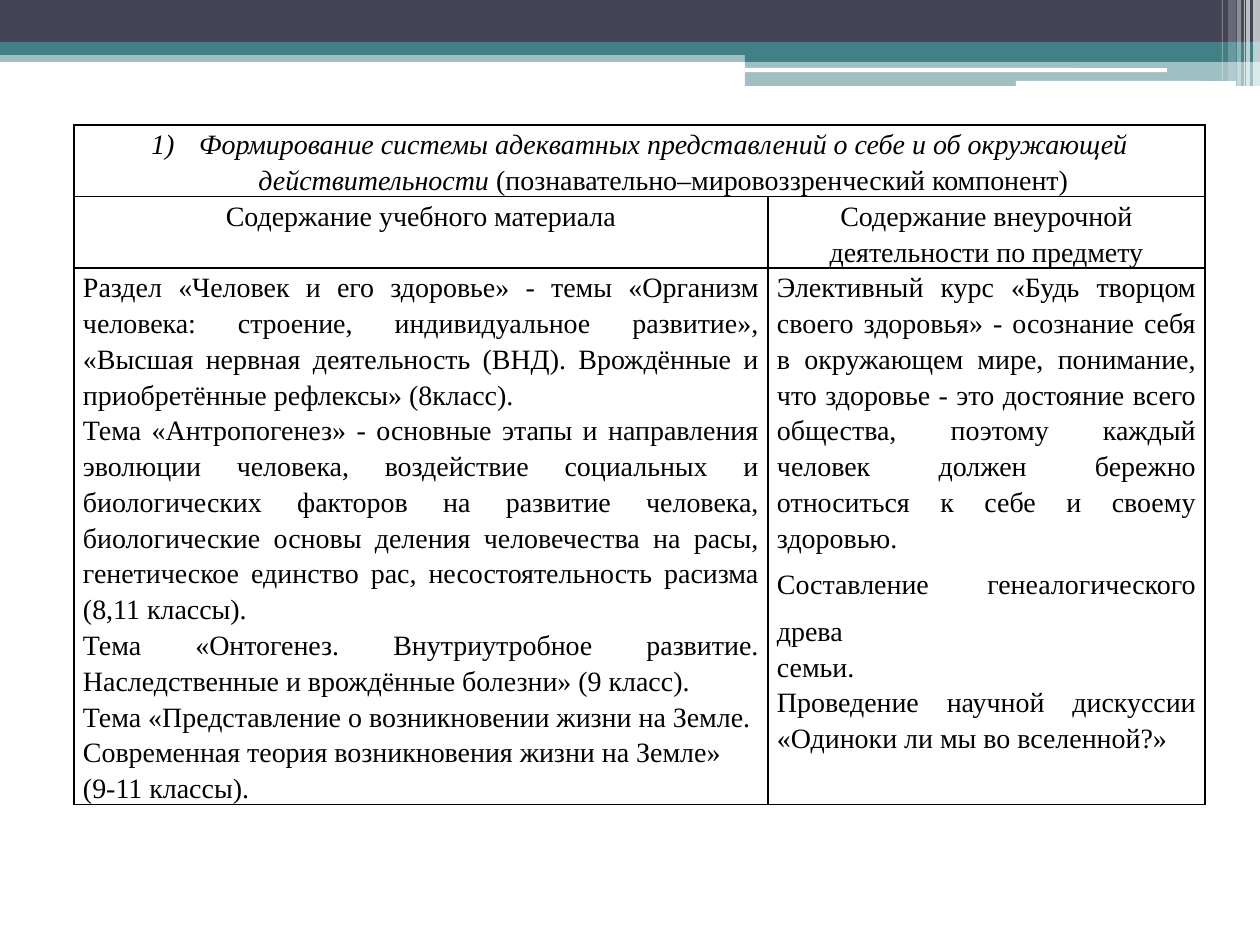
import pptx
import pptx.util
import pptx.dml.color
import pptx.enum.shapes
import pptx.enum.text
import pptx.oxml
import pptx.oxml.ns

RGB = pptx.dml.color.RGBColor
SHAPE = pptx.enum.shapes.MSO_SHAPE
ALIGN = pptx.enum.text.PP_ALIGN
NS = pptx.oxml.ns.nsdecls("a")

WHITE = RGB(0xFF, 0xFF, 0xFF)
BLACK = RGB(0, 0, 0)
TEAL = RGB(0x43, 0x80, 0x86)
SLATE = RGB(0x42, 0x44, 0x56)
FONT = "Times New Roman"
SIZE = 16

BANDS = [
    (SHAPE.RECTANGLE, 0, 50, 1260, 12, TEAL, 50),
    (SHAPE.RECTANGLE, 0, 0, 1260, 43, SLATE, 100),
    (SHAPE.RECTANGLE, 0, 42, 1260, 13, TEAL, 100),
    (SHAPE.RECTANGLE, 745, 49, 515, 13, TEAL, 100),
    (SHAPE.RECTANGLE, 745, 61, 515, 25, TEAL, 50),
    (SHAPE.ROUNDED_RECTANGLE, 745, 68, 422, 4, WHITE, 100),
    (SHAPE.ROUNDED_RECTANGLE, 1016, 81, 220, 5, WHITE, 100),
]
STRIPES = [
    (1253, 7, 86, 65),
    (1246, 4, 86, 65),
    (1244, 1, 86, 60),
    (1237, 4, 86, 40),
    (1228, 8, 81, 20),
    (1222, 1, 81, 30),
]

TABLE_LEFT, TABLE_TOP = 74, 125
COLUMNS = [694, 437]
ROWS = [67, 67, 500]
HEADING = [
    ("Формирование системы адекватных представлений о себе и об окружающей действительности", True),
    (" (познавательно–мировоззренческий компонент)", False),
]
SUBHEADS = ["Содержание учебного материала", "Содержание внеурочной деятельности по предмету"]
BODY = [
    [
        ("Раздел «Человек и его здоровье» - темы «Организм человека: строение, индивидуальное развитие», «Высшая нервная деятельность (ВНД). Врождённые и приобретённые рефлексы» (8класс).", ALIGN.JUSTIFY, 1.15),
        ("Тема «Антропогенез» - основные этапы и направления эволюции человека, воздействие социальных и биологических факторов на развитие человека, биологические основы деления человечества на расы, генетическое единство рас, несостоятельность расизма (8,11 классы).", ALIGN.JUSTIFY, 1.15),
        ("Тема «Онтогенез. Внутриутробное развитие. Наследственные и врождённые болезни» (9 класс).", ALIGN.JUSTIFY, 1.15),
        ("Тема «Представление о возникновении жизни на Земле. Современная теория возникновения жизни на Земле» (9-11 классы).", ALIGN.LEFT, 1.15),
    ],
    [
        ("Элективный курс «Будь творцом своего здоровья» - осознание себя в окружающем мире, понимание, что здоровье - это достояние всего общества, поэтому каждый человек должен бережно относиться к себе и своему здоровью.", ALIGN.JUSTIFY, 1.15),
        ("Составление генеалогического древа", ALIGN.JUSTIFY, 1.5),
        ("семьи.", ALIGN.JUSTIFY, 1.15),
        ("Проведение научной дискуссии «Одиноки ли мы во вселенной?»", ALIGN.JUSTIFY, 1.15),
    ],
]


def px(n):
    return pptx.util.Emu(round(n * 914400 / 126))


def add_band(slide, kind, x, y, w, h, color, opacity):
    s = slide.shapes.add_shape(kind, px(x), px(y), px(w), px(h))
    s.shadow.inherit = False
    s.line.fill.background()
    s.fill.solid()
    s.fill.fore_color.rgb = color
    if opacity < 100:
        clr = s.fill._xPr.find(".//" + pptx.oxml.ns.qn("a:srgbClr"))
        clr.append(pptx.oxml.parse_xml(f'<a:alpha {NS} val="{opacity * 1000}"/>'))


def format_cell(cell):
    cell.margin_left = cell.margin_right = px(9)
    cell.margin_top = cell.margin_bottom = 0
    cell.fill.background()
    tcPr = cell._tc.get_or_add_tcPr()
    for i, side in enumerate("LRTB"):
        tcPr.insert(i, pptx.oxml.parse_xml(
            f'<a:ln{side} {NS} w="12700"><a:solidFill><a:srgbClr val="{BLACK}"/>'
            f'</a:solidFill></a:ln{side}>'))


def write_cell(cell, paragraphs):
    tf = cell.text_frame
    tf.text = "\n".join(text for text, align, spacing in paragraphs)
    for p, (text, align, spacing) in zip(tf.paragraphs, paragraphs):
        p.alignment = align
        p.line_spacing = spacing
        for r in p.runs:
            format_run(r)


def format_run(r, italic=False):
    r.font.name = FONT
    r.font.size = pptx.util.Pt(SIZE)
    r.font.color.rgb = BLACK
    r.font.bold = False
    r.font.italic = italic


def write_heading(cell):
    p = cell.text_frame.paragraphs[0]
    p.alignment = ALIGN.CENTER
    p.line_spacing = 1.15
    for text, italic in HEADING:
        r = p.add_run()
        r.text = text
        format_run(r, italic)
    pPr = p._p.get_or_add_pPr()
    pPr.set("marL", str(px(48)))
    pPr.set("indent", str(-px(48)))
    pPr.append(pptx.oxml.parse_xml(f'<a:buFont {NS} typeface="{FONT}"/>'))
    pPr.append(pptx.oxml.parse_xml(f'<a:buAutoNum {NS} type="arabicParenR"/>'))


def main():
    prs = pptx.Presentation()
    prs.slide_width, prs.slide_height = px(1260), px(945)
    slide = prs.slides.add_slide(prs.slide_layouts[6])

    for band in BANDS:
        add_band(slide, *band)
    for x, w, h, opacity in STRIPES:
        add_band(slide, SHAPE.RECTANGLE, x, 0, w, h, WHITE, opacity)

    table = slide.shapes.add_table(
        len(ROWS), len(COLUMNS), px(TABLE_LEFT), px(TABLE_TOP),
        px(sum(COLUMNS)), px(sum(ROWS))).table
    table.first_row = table.horz_banding = False
    for column, w in zip(table.columns, COLUMNS):
        column.width = px(w)
    for row, h in zip(table.rows, ROWS):
        row.height = px(h)
    for cell in table.iter_cells():
        format_cell(cell)

    table.cell(0, 0).merge(table.cell(0, 1))
    write_heading(table.cell(0, 0))
    for i, (subhead, paragraphs) in enumerate(zip(SUBHEADS, BODY)):
        write_cell(table.cell(1, i), [(subhead, ALIGN.CENTER, 1.15)])
        write_cell(table.cell(2, i), paragraphs)

    prs.save("out.pptx")


if __name__ == "__main__":
    main()
